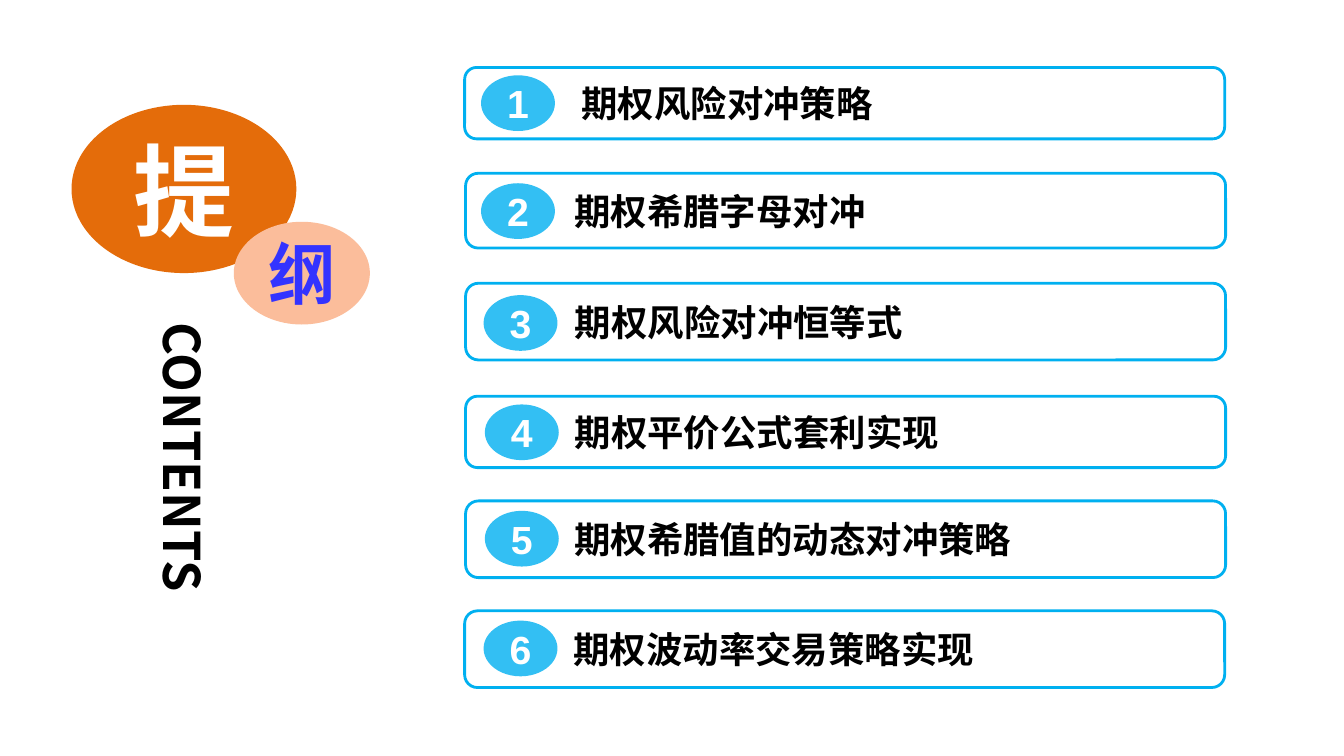
from lxml import etree
from pptx import Presentation
from pptx.dml.color import RGBColor
from pptx.enum.shapes import MSO_SHAPE
from pptx.enum.text import MSO_ANCHOR, PP_ALIGN
from pptx.oxml.ns import qn
from pptx.util import Pt

ELLIPSE = MSO_SHAPE.OVAL
ROUNDED = MSO_SHAPE.ROUNDED_RECTANGLE
MIDDLE = MSO_ANCHOR.MIDDLE
LEFT = PP_ALIGN.LEFT
CENTER = PP_ALIGN.CENTER

WHITE = RGBColor(0xFF, 0xFF, 0xFF)
BLACK = RGBColor(0x00, 0x00, 0x00)
CYAN = RGBColor(0x00, 0xB0, 0xF0)
ORANGE = RGBColor(0xE4, 0x6C, 0x0A)
PEACH = RGBColor(0xFB, 0xBD, 0x9B)
BLUE = RGBColor(0x33, 0x33, 0xFF)

CHINESE_FONT = "Noto Sans CJK SC"
NUMBER_FONT = "Arial"
BAR_WIDTH = 542.9
BADGE_SIZE = (52.8, 39.8)

TOPICS = [
    ("期权风险对冲策略", (331.9, 48.2, 51), (343.6, 53.8), 81),
    ("期权希腊字母对冲", (332.6, 123.8, 53.4), (343.6, 130.9), 75),
    ("期权风险对冲恒等式", (332.6, 202.3, 54.8), (345.4, 210.8), 75.5),
    ("期权平价公式套利实现", (332.6, 283, 51), (346.3, 288.9), 75.5),
    ("期权希腊值的动态对冲策略", (332.6, 357.8, 54.8), (346.3, 364.9), 75),
    ("期权波动率交易策略实现", (331.9, 436.3, 54.8), (345.4, 443.3), 75),
]


class OutlineSlide:
    def __init__(self, presentation):
        self.slide = presentation.slides.add_slide(presentation.slide_layouts[6])

    def set_text(self, shape, text, size, color, font=CHINESE_FONT,
                 align=CENTER, inset=0, wrap=True):
        frame = shape.text_frame
        frame.word_wrap = wrap
        frame.vertical_anchor = MIDDLE
        frame.margin_left = Pt(inset)
        frame.margin_right = frame.margin_top = frame.margin_bottom = 0
        paragraph = frame.paragraphs[0]
        paragraph.text = text
        paragraph.alignment = align
        paragraph.font.name = font
        paragraph.font.size = Pt(size)
        paragraph.font.bold = True
        paragraph.font.color.rgb = color
        properties = paragraph._p.pPr.find(qn("a:defRPr"))
        etree.SubElement(properties, qn("a:ea")).set("typeface", font)

    def shape(self, kind, left, top, width, height, fill):
        shape = self.slide.shapes.add_shape(
            kind, Pt(left), Pt(top), Pt(width), Pt(height))
        shape.shadow.inherit = False
        shape.fill.solid()
        shape.fill.fore_color.rgb = fill
        shape.line.fill.background()
        return shape

    def disc(self, left, top, width, height, fill, text, size, color):
        shape = self.shape(ELLIPSE, left, top, width, height, fill)
        self.set_text(shape, text, size, color)

    def bar(self, left, top, height, text, inset):
        shape = self.shape(ROUNDED, left, top, BAR_WIDTH, height, WHITE)
        shape.line.color.rgb = CYAN
        shape.line.width = Pt(2)
        self.set_text(shape, text, 26, BLACK, align=LEFT, inset=inset)

    def badge(self, left, top, number):
        shape = self.shape(ELLIPSE, left, top, *BADGE_SIZE, CYAN)
        color = shape._element.spPr.find(qn("a:solidFill"))[0]
        etree.SubElement(color, qn("a:alpha")).set("val", "80000")
        self.set_text(shape, str(number), 28, WHITE, NUMBER_FONT, wrap=False)

    def vertical_text(self, left, top, width, height, text, size):
        box = self.slide.shapes.add_textbox(
            Pt(left), Pt(top), Pt(width), Pt(height))
        self.set_text(box, text, size, BLACK, align=LEFT)
        box._element.txBody.bodyPr.set("vert", "eaVert")


def main():
    presentation = Presentation()
    presentation.slide_width = Pt(960)
    presentation.slide_height = Pt(540)
    outline = OutlineSlide(presentation)

    outline.disc(51.1, 74.9, 160.6, 120.2, ORANGE, "提", 72, WHITE)
    outline.disc(167, 158.4, 97.2, 73.4, PEACH, "纲", 48, BLUE)
    outline.vertical_text(99.4, 230.4, 64.1, 216, "CONTENTS", 36)

    for number, (text, bar, badge, inset) in enumerate(TOPICS, 1):
        outline.bar(*bar, text, inset)
        outline.badge(*badge, number)

    presentation.save("out.pptx")


if __name__ == "__main__":
    main()
